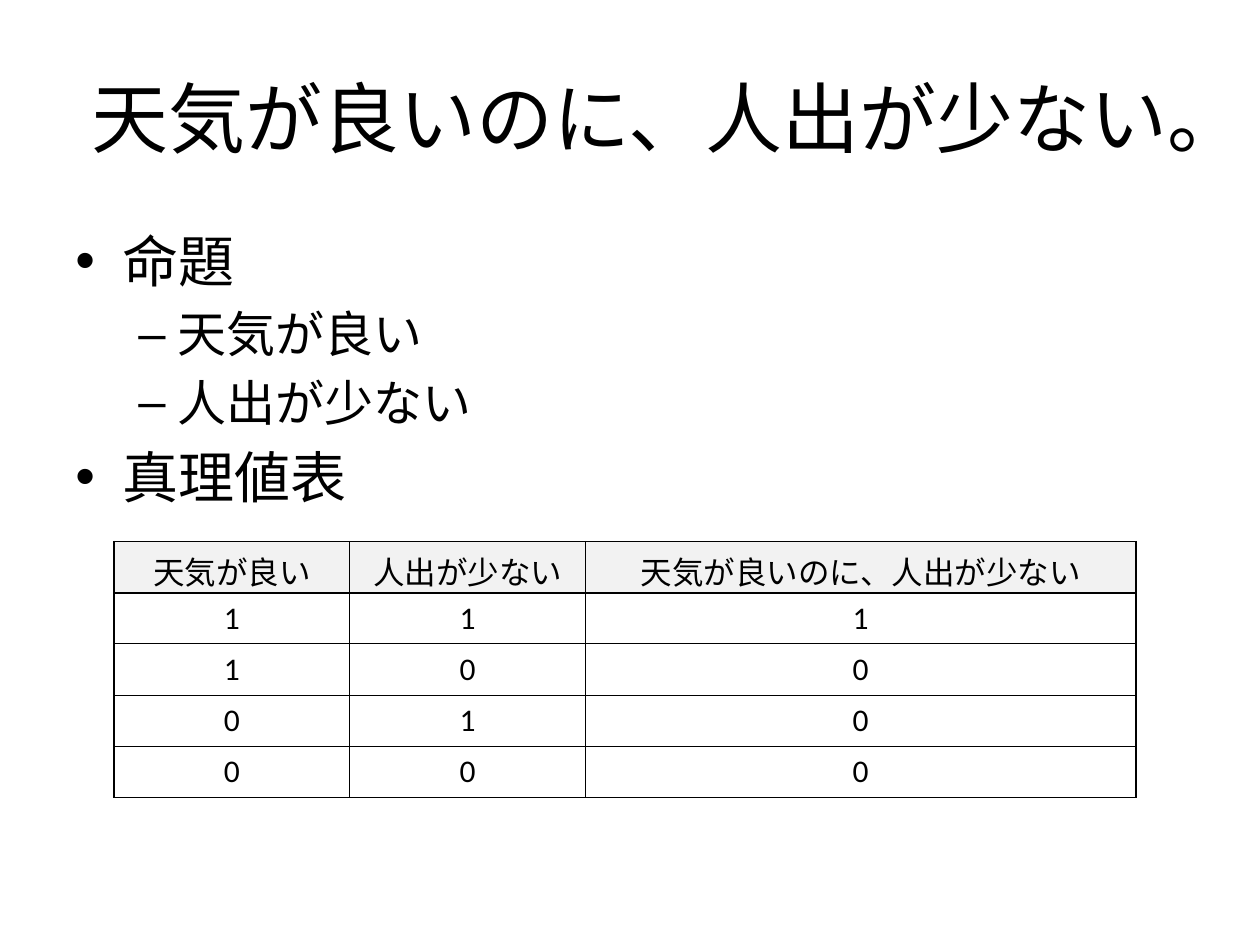
from lxml import etree
from pptx import Presentation
from pptx.dml import color as dc
from pptx.enum import text as et
from pptx.oxml import ns
from pptx.util import Cm, Pt


def rgb(code):
    """Turn a hex string into a colour."""
    return dc.RGBColor.from_string(code)


class Deck:
    """Hold the style and the current slide."""

    font, ink, head, paper = "Calibri", "000000", "F2F2F2", "FFFFFF"

    def __init__(self):
        """Start a presentation with one title-only slide."""
        self.prs = Presentation()
        self.prs.slide_width, self.prs.slide_height = Cm(25.4), Cm(19.05)
        self.slide = self.prs.slides.add_slide(self.prs.slide_layouts[5])

    def style(self, para, size):
        """Format the runs of a paragraph."""
        for run in para.runs:
            run.font.name, run.font.size = self.font, Pt(size)
            run.font.color.rgb = rgb(self.ink)

    def title(self, words, box, size=44):
        """Fill and place the title."""
        shape = self.slide.shapes.title
        shape.left, shape.top, shape.width, shape.height = map(Cm, box)
        frame = shape.text_frame
        frame.text = words
        frame.vertical_anchor = et.MSO_ANCHOR.MIDDLE
        frame.paragraphs[0].alignment = et.PP_ALIGN.CENTER
        self.style(frame.paragraphs[0], size)

    def bullets(self, items, box):
        """Add a bulleted list of (level, words) pairs."""
        kinds = [("•", 32, 0.95, 0.95), ("–", 28, 2.06, 0.79)]
        frame = self.slide.shapes.add_textbox(*map(Cm, box)).text_frame
        frame.word_wrap = True
        frame.text = "\n".join(words for _, words in items)
        for para, (level, _) in zip(frame.paragraphs, items):
            mark, size, left, hang = kinds[level]
            para.level = level
            para.space_before = Pt(size * 0.2)
            self.style(para, size)
            props = para._p.get_or_add_pPr()
            props.set("marL", str(Cm(left)))
            props.set("indent", str(-Cm(hang)))
            face = etree.SubElement(props, ns.qn("a:buFont"))
            face.set("typeface", "Arial")
            etree.SubElement(props, ns.qn("a:buChar")).set("char", mark)

    def border(self, cell, widths):
        """Draw the left, right, top and bottom edges of a cell."""
        props = cell._tc.get_or_add_tcPr()
        for spot, (side, width) in enumerate(zip("LRTB", widths)):
            line = etree.Element(ns.qn(f"a:ln{side}"), w=str(Pt(width)))
            fill = etree.SubElement(line, ns.qn("a:solidFill"))
            etree.SubElement(fill, ns.qn("a:srgbClr")).set("val", self.ink)
            props.insert(spot, line)

    def table(self, rows, spot, cols, high, size=18, thin=0.5, thick=1):
        """Add a table with a shaded header row."""
        box = (*spot, sum(cols), high * len(rows))
        grid = self.slide.shapes.add_table(
            len(rows), len(cols), *map(Cm, box)).table
        grid.first_row = grid.horz_banding = False
        for col, width in zip(grid.columns, cols):
            col.width = Cm(width)
        for r, row in enumerate(rows):
            grid.rows[r].height = Cm(high)
            for c, words in enumerate(row):
                cell = grid.cell(r, c)
                cell.text = str(words)
                cell.vertical_anchor = et.MSO_ANCHOR.MIDDLE
                cell.fill.solid()
                cell.fill.fore_color.rgb = rgb(self.paper if r else self.head)
                para = cell.text_frame.paragraphs[0]
                para.alignment = et.PP_ALIGN.CENTER
                self.style(para, size)
                heavy = (c != 1, c != 0, r < 2, r == 0)
                self.border(cell, [thick if h else thin for h in heavy])


def main():
    """Build the slide and save it."""
    sun, few = "天気が良い", "人出が少ない"
    both = f"{sun}のに、{few}"
    deck = Deck()
    deck.title(f"{both}。", (1.27, 0.76, 22.86, 3.18))
    deck.bullets([(0, "命題"), (1, sun), (1, few), (0, "真理値表")],
                 (1.27, 4.45, 22.86, 12.57))
    truth = [(p, q, p & q) for p in (1, 0) for q in (1, 0)]
    deck.table([(sun, few, both), *truth], (2.3, 10.92),
               (4.75, 4.75, 11.1), 1.03)
    deck.prs.save("out.pptx")


if __name__ == "__main__":
    main()
